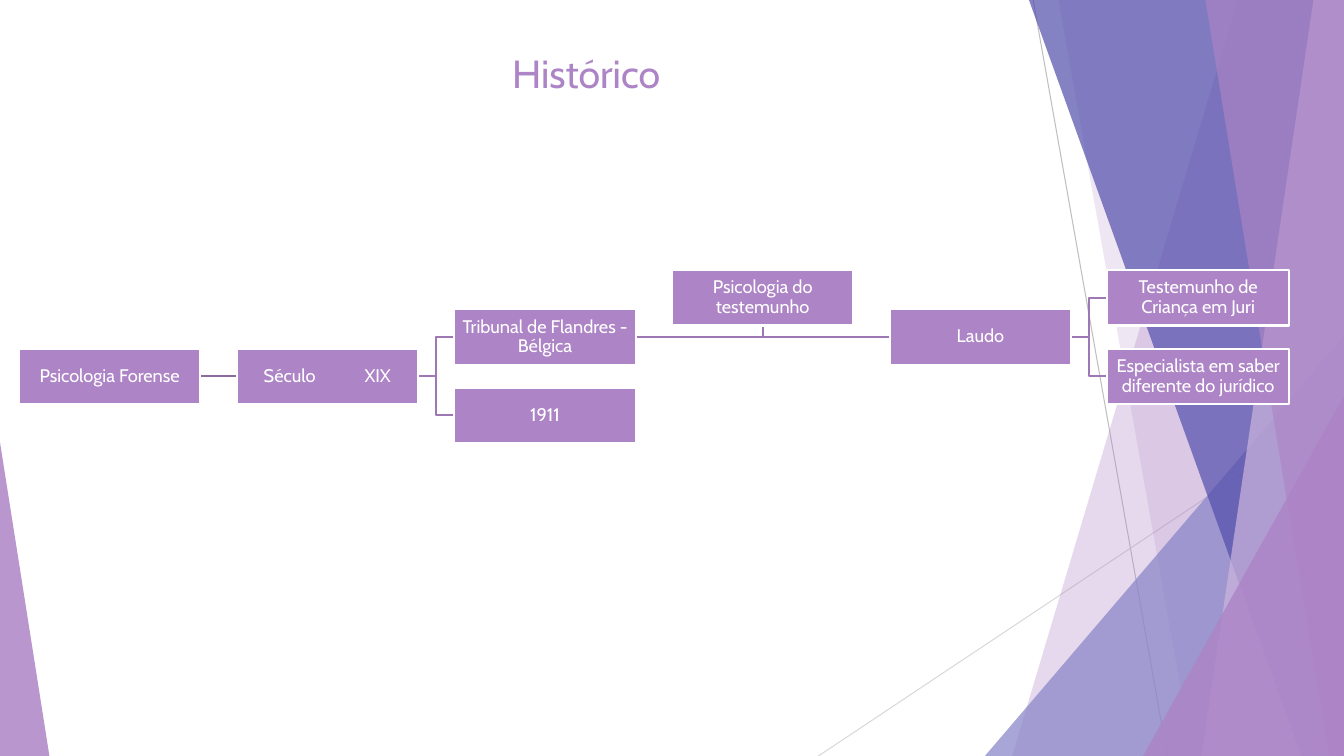
"""Build the "Histórico" slide: a left-to-right timeline tree over a faceted backdrop."""
import pptx
import pptx.dml.color
import pptx.enum.shapes
import pptx.enum.text
import pptx.oxml
import pptx.oxml.ns
import pptx.util

Pt = pptx.util.Pt
RGB = pptx.dml.color.RGBColor
SHAPE = pptx.enum.shapes.MSO_SHAPE
STRAIGHT = pptx.enum.shapes.MSO_CONNECTOR.STRAIGHT
ANCHOR = pptx.enum.text.MSO_ANCHOR
CENTER = pptx.enum.text.PP_ALIGN.CENTER

LILAC = RGB(0xAD, 0x84, 0xC6)
PALE_LILAC = RGB(0xCE, 0xB5, 0xDD)
PERIWINKLE = RGB(0x87, 0x84, 0xC7)
INDIGO = RGB(0x52, 0x4E, 0xAB)
ROOT_LINK = RGB(0x8B, 0x6A, 0x9F)
BRANCH_LINK = RGB(0x9D, 0x78, 0xB4)
GREY = RGB(0xBF, 0xBF, 0xBF)
LIGHT_GREY = RGB(0xD9, 0xD9, 0xD9)
WHITE = RGB(0xFF, 0xFF, 0xFF)

TITLE = "Histórico"
STEPS = {
    "forense": ("Psicologia Forense", 0, 2),
    "século": ("Século \tXIX", 1, 2),
    "tribunal": ("Tribunal de Flandres - Bélgica", 2, 1),
    "laudo": ("Laudo", 4, 1),
    "criança": ("Testemunho de Criança em Juri", 5, 0),
    "especialista": ("Especialista em saber diferente do jurídico", 5, 2),
    "testemunho": ("Psicologia do testemunho", 3, 0),
    "1911": ("1911", 2, 3),
}
LINKS = [
    ("século", "1911"),
    ("tribunal", "testemunho"),
    ("laudo", "especialista"),
    ("laudo", "criança"),
    ("tribunal", "laudo"),
    ("século", "tribunal"),
    ("forense", "século"),
]
ASSISTANT = "testemunho"
RAYS = [
    ((738, 0), (833.8, 540), GREY),
    ((960, 290), (584.6, 540), LIGHT_GREY),
]
FACETS = [
    ("band", (884.2, 723), LILAC, 30),
    ("band", (756, 852), LILAC, 20),
    ("triangle", (703.5, 240, 256.5, 300, 1), PERIWINKLE, 72),
    ("band", (735, 929.5), INDIGO, 70),
    ("band", (938.2, 858.2), PALE_LILAC, 70),
    ("band", (861, 949), LILAC, 65),
    ("triangle", (816.5, 283, 143.5, 257, 1), LILAC, 80),
    ("triangle", (0, 316, 35.3, 224, 0), LILAC, 85),
]

WIDTH, HEIGHT = 960, 540
TREE_LEFT, TREE_TOP = 13.5, 193
COLUMN_STEP, ROW_STEP = 155.5, 28
BOX_WIDTH, BOX_HEIGHT = 129.6, 39.5
TITLE_FRAME = {"word_wrap": True, "vertical_anchor": ANCHOR.TOP}
STEP_FRAME = {
    "word_wrap": True, "vertical_anchor": ANCHOR.MIDDLE,
    "margin_left": Pt(0.65), "margin_right": Pt(0.65),
    "margin_top": Pt(0.65), "margin_bottom": Pt(0.65),
}

deck = pptx.Presentation()
deck.slide_width, deck.slide_height = Pt(WIDTH), Pt(HEIGHT)
slide = deck.slides.add_slide(deck.slide_layouts[6])
shapes = slide.shapes


def apply(target, values):
    for name, value in values.items():
        setattr(target, name, value)


def write(frame, text, size, color, frame_format, spacing):
    apply(frame, frame_format)
    paragraph = frame.paragraphs[0]
    apply(paragraph, {"alignment": CENTER, "line_spacing": spacing})
    run = paragraph.add_run()
    run.text = text
    apply(run.font, {"name": "Cabin", "size": Pt(size)})
    run.font.color.rgb = color


def stroke(outline, color, width):
    outline.color.rgb = color
    outline.width = Pt(width)


def straight(start, end, color, width):
    line = shapes.add_connector(STRAIGHT, *map(Pt, start + end))
    stroke(line.line, color, width)
    line._element.spPr.append(pptx.oxml.parse_xml(
        "<a:effectLst %s/>" % pptx.oxml.ns.nsdecls("a")))


def outline_of(points, close):
    first, *rest = [tuple(map(Pt, point)) for point in points]
    builder = shapes.build_freeform(*first)
    builder.add_line_segments(rest, close=close)
    shape = builder.convert_to_shape()
    shape.shadow.inherit = False
    return shape


def facet(kind, measures, color, opacity):
    if kind == "band":
        top, bottom = measures
        shape = outline_of(
            [(top, 0), (WIDTH, 0), (WIDTH, HEIGHT), (bottom, HEIGHT)], True)
    else:
        *frame, apex = measures
        shape = shapes.add_shape(SHAPE.ISOSCELES_TRIANGLE, *map(Pt, frame))
        shape.adjustments[0] = apex
        shape.shadow.inherit = False
    shape.fill.solid()
    shape.fill.fore_color.rgb = color
    shape.line.fill.background()
    tint = next(shape._element.spPr.iter(pptx.oxml.ns.qn("a:srgbClr")))
    tint.append(pptx.oxml.parse_xml('<a:alpha %s val="%d"/>' % (
        pptx.oxml.ns.nsdecls("a"), opacity * 1000)))


def corner(step):
    _, column, row = STEPS[step]
    return TREE_LEFT + column * COLUMN_STEP, TREE_TOP + row * ROW_STEP


def link(parent, child):
    (parent_x, parent_y), (child_x, child_y) = corner(parent), corner(child)
    start = (parent_x + BOX_WIDTH, parent_y + BOX_HEIGHT / 2)
    end = (child_x, child_y + BOX_HEIGHT / 2)
    color = ROOT_LINK if parent == "forense" else BRANCH_LINK
    if start[1] == end[1]:
        straight(start, end, color, 1.5)
        return
    if child == ASSISTANT:
        middle = child_x + BOX_WIDTH / 2
        points = [start, (middle, start[1]), (middle, child_y + BOX_HEIGHT)]
    else:
        middle = (start[0] + end[0]) / 2
        points = [start, (middle, start[1]), (middle, end[1]), end]
    elbow = outline_of(points, False)
    elbow.fill.background()
    stroke(elbow.line, color, 1.5)


for ray_start, ray_end, ray_color in RAYS:
    straight(ray_start, ray_end, ray_color, 0.75)
for facet_parts in FACETS:
    facet(*facet_parts)

heading = shapes.add_textbox(Pt(35.3), Pt(31.7), Pt(766.8), Pt(103.7))
write(heading.text_frame, TITLE, 28, LILAC, TITLE_FRAME, 1.0)

for parent_step, child_step in LINKS:
    link(parent_step, child_step)
for step_key, (label, _, _) in STEPS.items():
    box = shapes.add_shape(
        SHAPE.RECTANGLE, *map(Pt, corner(step_key) + (BOX_WIDTH, BOX_HEIGHT)))
    box.shadow.inherit = False
    box.fill.solid()
    box.fill.fore_color.rgb = LILAC
    stroke(box.line, WHITE, 1.5)
    write(box.text_frame, label, 13, WHITE, STEP_FRAME, 0.9)

deck.save("out.pptx")
